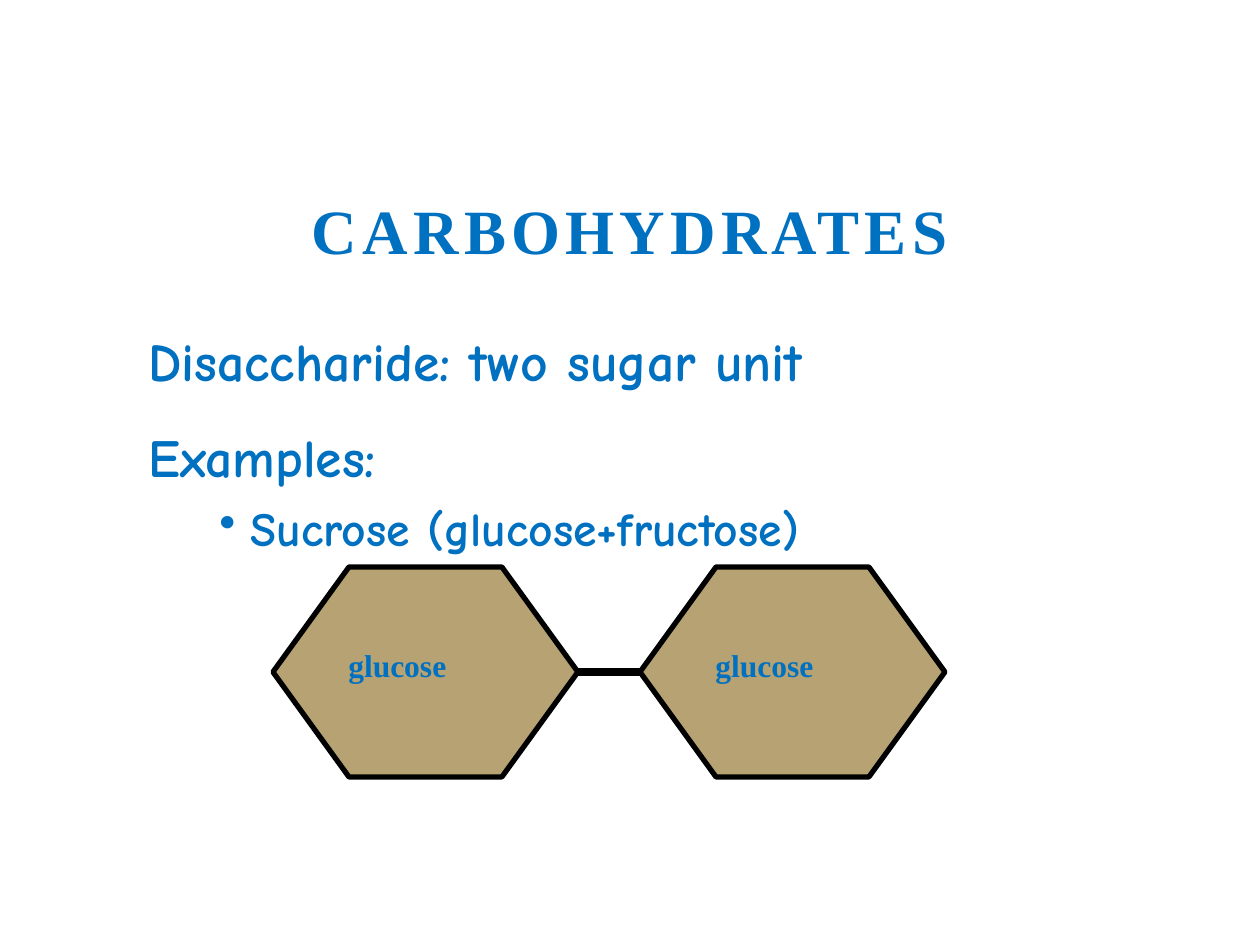
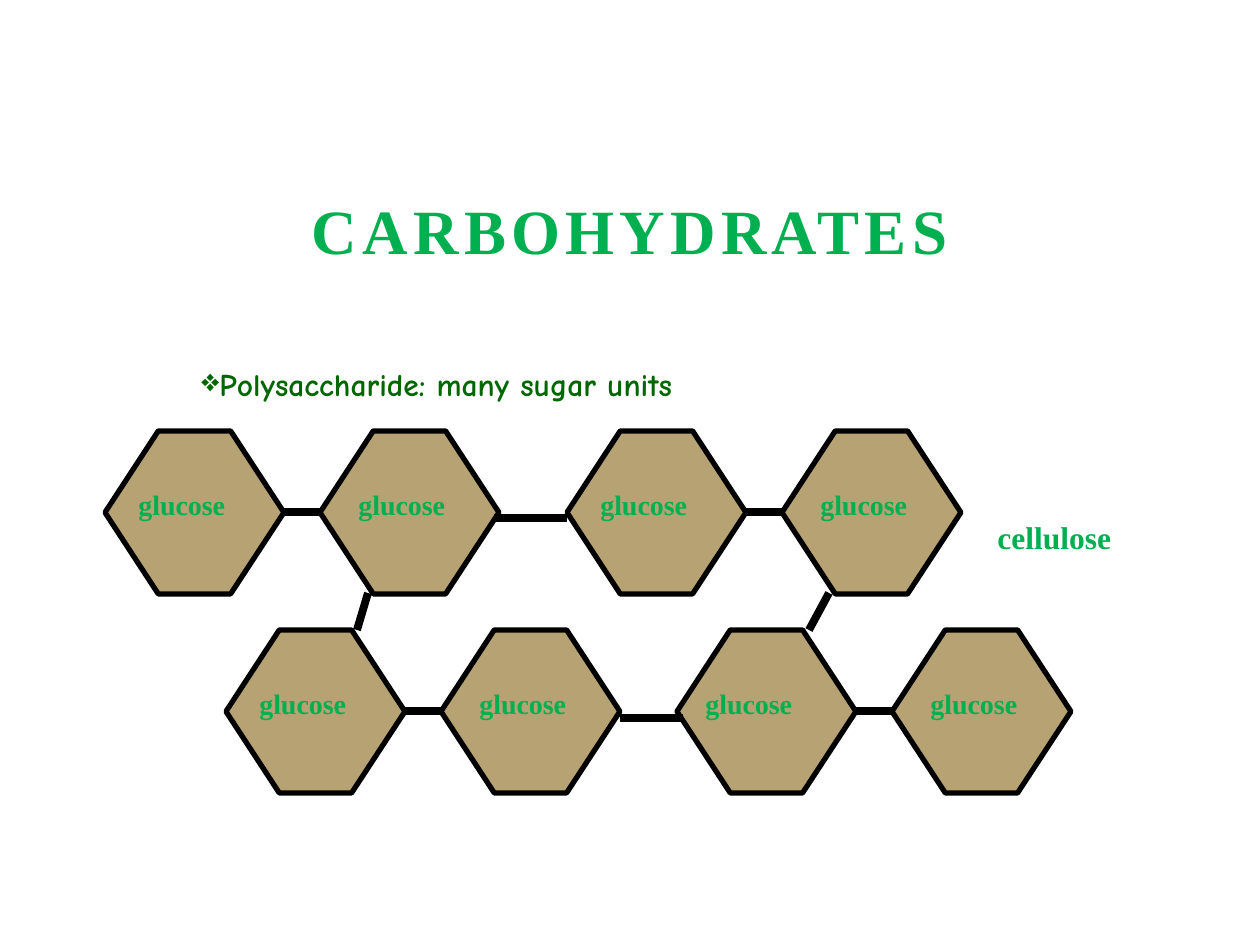
import pptx
import pptx.util
import pptx.dml.color
import pptx.enum.shapes
import pptx.enum.text
import pptx.oxml.ns
from lxml import etree

EMU = 914400 / 126  # one px
COLORS = {"blue": "0070C0", "green": "00B050", "dark_green": "006600",
          "sand": "B6A272", "black": "000000"}
SERIF, HAND = "Times New Roman", "Comic Neue"

prs = pptx.Presentation()
prs.slide_width = round(1260 * EMU)
prs.slide_height = round(945 * EMU)


def add_text(s, box, lines, size, font, color, wrap=True):
    """Add a text box with one paragraph per line, all in one bold style."""
    sp = s.shapes.add_textbox(*[round(v * EMU) for v in box])
    tf = sp.text_frame
    tf.word_wrap = wrap
    if not wrap:
        tf.auto_size = pptx.enum.text.MSO_AUTO_SIZE.SHAPE_TO_FIT_TEXT
    tf.text = "\n".join(lines)
    for p in tf.paragraphs:
        for r in p.runs:
            r.font.size = pptx.util.Pt(size)
            r.font.name = font
            r.font.bold = True
            r.font.color.rgb = pptx.dml.color.RGBColor.from_string(COLORS[color])
    return tf


def add_line(s, x1, y1, x2, y2):
    """Add a thick black bond between two points."""
    cn = s.shapes.add_connector(pptx.enum.shapes.MSO_CONNECTOR.STRAIGHT,
                                *[round(v * EMU) for v in (x1, y1, x2, y2)])
    cn.line.width = pptx.util.Pt(4.5)
    cn.line.color.rgb = pptx.dml.color.RGBColor.from_string(COLORS["black"])
    etree.SubElement(cn._element.spPr, pptx.oxml.ns.qn("a:effectLst"))


# Each pair: left, top, label offsets from the left of its two hexagons
slides = [
    dict(color="blue", hexagon=(305, 210), pitch=367, adj=0.362,
         label=(129, 50), label_dy=73, label_size=18,
         pairs=[(273, 567, (63, 63))], bonds=[]),
    dict(color="green", hexagon=(179, 163), pitch=215, adj=0.327,
         label=(116, 47), label_dy=50, label_size=16,
         pairs=[(105, 431, (21, 26)), (226, 630, (21, 26)),
                (567, 431, (21, 26)), (677, 630, (16, 26))],
         bonds=[(494, 518, 567, 518), (620, 718, 683, 718),
                (357, 630, 368, 593), (809, 630, 829, 593)]),
]

for d in slides:
    s = prs.slides.add_slide(prs.slide_layouts[6])

    # Title
    tf = add_text(s, (189, 179, 882, 94), ["CARBOHYDRATES"], 36, SERIF, d["color"])
    tf.vertical_anchor = pptx.enum.text.MSO_ANCHOR.BOTTOM
    p = tf.paragraphs[0]
    p.alignment = pptx.enum.text.PP_ALIGN.CENTER
    p.runs[0].font._element.set("spc", "300")

    # Pairs of joined sugar units
    w, h = d["hexagon"]
    for left, top, offsets in d["pairs"]:
        for i, dx in enumerate(offsets):
            x = left + i * d["pitch"]
            sp = s.shapes.add_shape(pptx.enum.shapes.MSO_SHAPE.HEXAGON,
                                    *[round(v * EMU) for v in (x, top, w, h)])
            sp.adjustments[0] = d["adj"]
            sp.shadow.inherit = False
            sp.fill.solid()
            sp.fill.fore_color.rgb = pptx.dml.color.RGBColor.from_string(COLORS["sand"])
            sp.line.color.rgb = pptx.dml.color.RGBColor.from_string(COLORS["black"])
            sp.line.width = pptx.util.Pt(3)
            add_text(s, (x + dx, top + d["label_dy"], *d["label"]), ["glucose"],
                     d["label_size"], SERIF, d["color"], wrap=False)
        add_line(s, left + w, top + h // 2, left + d["pitch"], top + h // 2)

    # Bonds between pairs
    for bond in d["bonds"]:
        add_line(s, *bond)

disaccharide, polysaccharide = prs.slides

# Disaccharide text
tf = add_text(disaccharide, (136, 294, 987, 262),
              ["Disaccharide: two sugar unit", "Examples:", "Sucrose (glucose+fructose)"],
              30.6, HAND, "blue")
tf.margin_top = round(15 * EMU)
heading, examples, sucrose = tf.paragraphs
heading.line_spacing = examples.line_spacing = 1.3
examples.space_before = pptx.util.Pt(7)
sucrose.space_before = pptx.util.Pt(6.3)
sucrose.runs[0].font.size = pptx.util.Pt(27.2)
sucrose.level = 1

# Polysaccharide text
tf = add_text(polysaccharide, (189, 336, 882, 420), ["Polysaccharide: many sugar units"],
              18, HAND, "dark_green")
tf.margin_top = round(10 * EMU)
many = tf.paragraphs[0]
many.line_spacing = 1.5
add_text(polysaccharide, (985, 512, 142, 50), ["cellulose"], 18, SERIF, "green", wrap=False)

# Bullets: paragraph, character, left margin and indent in px
for p, char, margin, indent in [(sucrose, "•", 102, -31), (many, "❖", 0, 0)]:
    pPr = p._p.get_or_add_pPr()
    pPr.set("marL", str(round(margin * EMU)))
    pPr.set("indent", str(round(indent * EMU)))
    etree.SubElement(pPr, pptx.oxml.ns.qn("a:buChar")).set("char", char)

prs.save("out.pptx")
